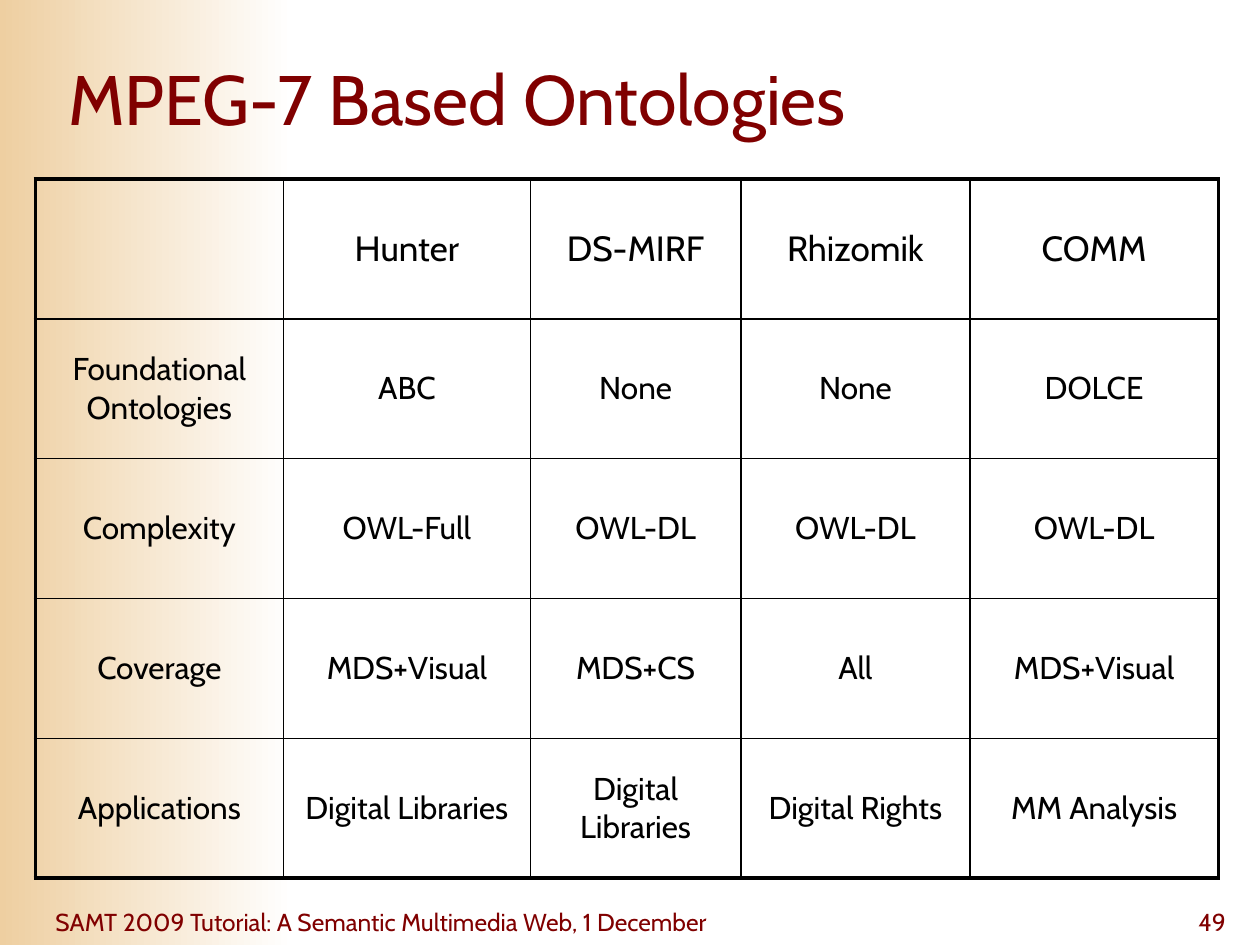
from lxml import etree
from pptx import Presentation
from pptx import util as u
from pptx.dml.color import RGBColor
from pptx.enum import shapes, text
from pptx.oxml import ns

MAROON = RGBColor(0x80, 0x00, 0x00)
BLACK = RGBColor(0x00, 0x00, 0x00)
SAND = RGBColor(0xEE, 0xCF, 0xA1)
WHITE = RGBColor(0xFF, 0xFF, 0xFF)

COLUMNS = [1.97, 1.96, 1.67, 1.82, 1.97]
ROWS = [
    ["", "Hunter", "DS-MIRF", "Rhizomik", "COMM"],
    ["Foundational Ontologies", "ABC", "None", "None", "DOLCE"],
    ["Complexity", "OWL-Full", "OWL-DL", "OWL-DL", "OWL-DL"],
    ["Coverage", "MDS+Visual", "MDS+CS", "All", "MDS+Visual"],
    ["Applications", "Digital Libraries", "Digital Libraries", "Digital Rights", "MM Analysis"],
]


class SlideBuilder:
    font = "Cabin"
    thin, thick = 1, 2.25

    def __init__(self, prs):
        self.s = prs.slides.add_slide(prs.slide_layouts[5])

    def add_text(self, tf, words, size, color, align):
        tf.vertical_anchor = text.MSO_ANCHOR.MIDDLE
        p = tf.paragraphs[0]
        p.alignment = align
        r = p.add_run()
        r.text = words
        style = {"name": self.font, "size": u.Pt(size), "bold": False}
        for name, value in style.items():
            setattr(r.font, name, value)
        r.font.color.rgb = color

    def band(self, width, height):
        sp = self.s.shapes.add_shape(shapes.MSO_SHAPE.RECTANGLE, 0, 0,
                                     u.Inches(width), u.Inches(height))
        sp.shadow.inherit = False
        sp.line.fill.background()
        sp.fill.gradient()
        sp.fill.gradient_angle = 0
        for stop, color in zip(sp.fill.gradient_stops, (SAND, WHITE)):
            stop.color.rgb = color
        self.s.shapes._spTree.insert(2, sp._element)

    def title(self, words, left, top, width, height):
        sp = self.s.shapes.title
        box = {"left": left, "top": top, "width": width, "height": height}
        for name, value in box.items():
            setattr(sp, name, u.Inches(value))
        self.add_text(sp.text_frame, words, 40, MAROON, text.PP_ALIGN.LEFT)

    def footer(self, words, left, width, align):
        sp = self.s.shapes.add_textbox(u.Inches(left), u.Inches(7.13),
                                       u.Inches(width), u.Inches(0.37))
        tf = sp.text_frame
        tf.word_wrap = True
        for side in ("left", "top", "right", "bottom"):
            setattr(tf, f"margin_{side}", 0)
        self.add_text(tf, words, 14, MAROON, align)

    def borders(self, cell, outer):
        tc_pr = cell._tc.get_or_add_tcPr()
        for side, is_outer in outer.items():
            width = self.thick if is_outer else self.thin
            ln = etree.SubElement(tc_pr, ns.qn(f"a:ln{side}"), w=str(u.Pt(width)))
            fill = etree.SubElement(ln, ns.qn("a:solidFill"))
            etree.SubElement(fill, ns.qn("a:srgbClr"), val=str(BLACK))

    def table(self, rows, columns, left, top, row_height):
        last_row, last_col = len(rows) - 1, len(columns) - 1
        table = self.s.shapes.add_table(
            len(rows), len(columns), u.Inches(left), u.Inches(top),
            u.Inches(sum(columns)), u.Inches(row_height * len(rows))).table
        table.first_row = table.horz_banding = False
        for column, width in zip(table.columns, columns):
            column.width = u.Inches(width)
        for i, row in enumerate(rows):
            table.rows[i].height = u.Inches(row_height)
            for j, words in enumerate(row):
                cell = table.cell(i, j)
                self.borders(cell, {"L": j == 0, "R": j == last_col,
                                    "T": i == 0, "B": i == last_row})
                cell.fill.background()
                if words:
                    cell.vertical_anchor = text.MSO_ANCHOR.MIDDLE
                    self.add_text(cell.text_frame, words, 18 if i else 20, BLACK,
                                  text.PP_ALIGN.CENTER)


def main():
    prs = Presentation()
    prs.slide_width, prs.slide_height = u.Inches(10), u.Inches(7.5)
    slide = SlideBuilder(prs)
    slide.band(2.33, 7.5)
    slide.title("MPEG-7 Based Ontologies", 0.44, 0.15, 9.3, 1.25)
    slide.footer("SAMT 2009 Tutorial: A Semantic Multimedia Web, 1 December",
                 0.44, 6.07, text.PP_ALIGN.LEFT)
    slide.footer("49", 7.65, 2.08, text.PP_ALIGN.RIGHT)
    slide.table(ROWS, COLUMNS, 0.28, 1.42, 1.11)
    prs.save("out.pptx")


if __name__ == "__main__":
    main()
